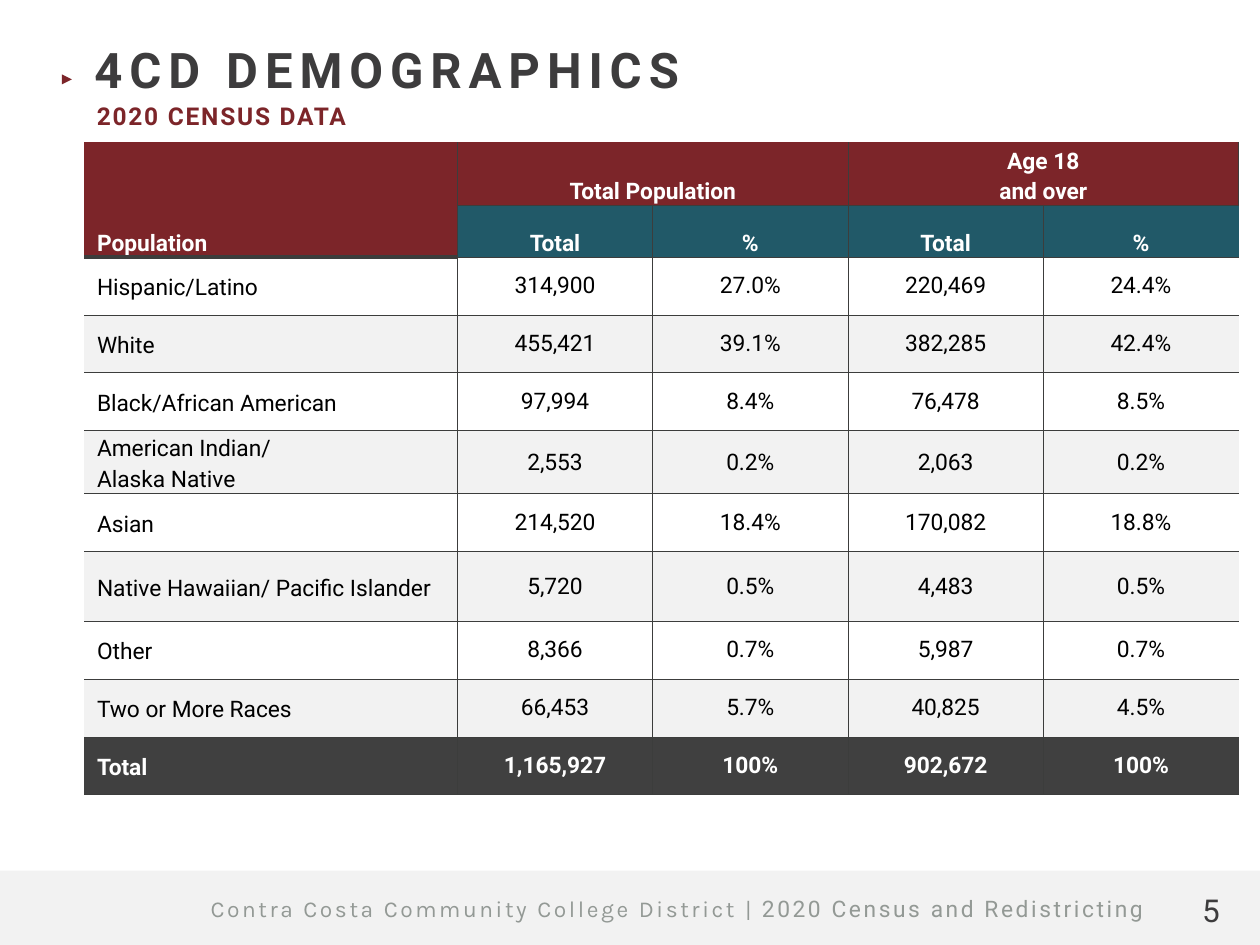
from lxml import etree
from pptx import Presentation
from pptx.dml.color import RGBColor
from pptx.enum.shapes import MSO_SHAPE
from pptx.enum.text import MSO_ANCHOR, PP_ALIGN
from pptx.oxml.ns import qn
from pptx.util import Inches, Pt

LEFT, CENTER, RIGHT = PP_ALIGN.LEFT, PP_ALIGN.CENTER, PP_ALIGN.RIGHT
BOTTOM, MIDDLE = MSO_ANCHOR.BOTTOM, MSO_ANCHOR.MIDDLE
TRIANGLE, RECTANGLE = MSO_SHAPE.ISOSCELES_TRIANGLE, MSO_SHAPE.RECTANGLE

MAROON, TEAL, CHARCOAL, INK = "7C2529", "215968", "404040", "3D3C3D"
PALE, WHITE, BLACK, GRAY, RULE = "F2F2F2", "FFFFFF", "000000", "939995", "3C3D3C"
NO_STYLE = "{2D5ABB26-0587-4C30-8999-92F81FD0307C}"
THIN, THICK = 0.5, 2.25

ROWS = [
    ("Population", "Total Population", "", "Age 18\nand over", ""),
    ("", "Total", "%", "Total", "%"),
    ("Hispanic/Latino", "314,900", "27.0%", "220,469", "24.4%"),
    ("White", "455,421", "39.1%", "382,285", "42.4%"),
    ("Black/African American", "97,994", "8.4%", "76,478", "8.5%"),
    ("American Indian/\nAlaska Native", "2,553", "0.2%", "2,063", "0.2%"),
    ("Asian", "214,520", "18.4%", "170,082", "18.8%"),
    ("Native Hawaiian/ Pacific Islander", "5,720", "0.5%", "4,483", "0.5%"),
    ("Other", "8,366", "0.7%", "5,987", "0.7%"),
    ("Two or More Races", "66,453", "5.7%", "40,825", "4.5%"),
    ("Total", "1,165,927", "100%", "902,672", "100%"),
]
COLUMN_WIDTHS = [2.96] + [1.55] * 4
ROW_HEIGHTS = [0.5, 0.41, 0.46, 0.46, 0.46, 0.5, 0.46, 0.55, 0.46, 0.46, 0.46]
MERGES = [((0, 0), (1, 0)), ((0, 1), (0, 2)), ((0, 3), (0, 4))]
HEADER_ROWS = 2
LAST_ROW, LAST_COLUMN = len(ROWS) - 1, len(COLUMN_WIDTHS) - 1

TEXTS = [
    ((1.33, 7.08, 7.84, 0.31), RIGHT, 0.9, [
        ("Contra Costa Community College District ",
         dict(size=13, name="Karla", color=GRAY, spacing=1.5)),
        ("| 2020 Census and Redistricting", dict(size=13, color=GRAY, spacing=1.5))]),
    ((0.65, 0.32, 6.92, 0.31), LEFT, 0.9, [
        ("4CD DEMOGRAPHICS", dict(size=28, color=INK, bold=True, spacing=4))]),
    ((0.67, 0.78, 6.92, 0.31), LEFT, 0.9, [
        ("2020 CENSUS DATA", dict(size=14, color=MAROON, bold=True, spacing=1))]),
    ((9.22, 7.02, 0.78, 0.38), CENTER, 1.0, [("5", dict(size=18, color=INK))]),
]


def rgb(color):
    return RGBColor.from_string(color)


def set_all(target, values):
    for key, value in values.items():
        setattr(target, key, value)


def add_span(para, text, size, color, name="Roboto", bold=False, spacing=0):
    span = para.add_run()
    span.text = text
    set_all(span.font, dict(size=Pt(size), name=name, bold=bold))
    span.font.color.rgb = rgb(color)
    if spacing:
        span.font._element.set("spc", str(int(spacing * 100)))


def add_shape(page, kind, place, color, rotation=0):
    shape = page.shapes.add_shape(kind, *map(Inches, place))
    shape.rotation = rotation
    shape.shadow.inherit = False
    shape.fill.solid()
    shape.fill.fore_color.rgb = rgb(color)
    shape.line.fill.background()


def add_text(page, place, align, line_spacing, spans):
    box = page.shapes.add_textbox(*map(Inches, place))
    box.text_frame.word_wrap = True
    para = box.text_frame.paragraphs[0]
    set_all(para, dict(alignment=align, line_spacing=line_spacing))
    for text, style in spans:
        add_span(para, text, **style)


def add_borders(cell, row, column):
    above = THICK if (row, column) == (HEADER_ROWS, 0) else THIN
    below = THICK if (row, column) == (0, 0) else THIN
    sides = [("L", THIN, column > 0), ("R", THIN, column < LAST_COLUMN),
             ("T", above, row > 0), ("B", below, True)]
    properties = cell._tc.get_or_add_tcPr()
    for side, width, shown in sides:
        if shown:
            line = etree.SubElement(properties, qn(f"a:ln{side}"), w=str(Pt(width)))
            fill = etree.SubElement(line, qn("a:solidFill"))
            etree.SubElement(fill, qn("a:srgbClr"), val=RULE)


def cell_fill(row, column):
    if row == LAST_ROW:
        return CHARCOAL
    if row < HEADER_ROWS:
        return TEAL if row == 1 and column > 0 else MAROON
    return PALE if row % 2 else WHITE


def fill_cell(cell, row, column, text):
    header, label = row < HEADER_ROWS, column == 0
    strong = header or row == LAST_ROW
    if not cell.is_spanned:
        add_borders(cell, row, column)
    cell.fill.solid()
    cell.fill.fore_color.rgb = rgb(cell_fill(row, column))
    side = 0.05 if header or label else 0
    set_all(cell, dict(margin_left=Inches(0.1 if label else side), margin_right=Inches(side),
                       margin_top=0, margin_bottom=0,
                       vertical_anchor=BOTTOM if header else MIDDLE))
    if not text:
        return
    for index, line in enumerate(text.split("\n")):
        frame = cell.text_frame
        para = frame.add_paragraph() if index else frame.paragraphs[0]
        set_all(para, dict(alignment=LEFT if label else CENTER,
                           line_spacing=1.15 if header or label else 1.0))
        add_span(para, line, 13, WHITE if strong else BLACK, bold=strong)


def add_population_table(page):
    place = (0.67, 1.13, sum(COLUMN_WIDTHS), sum(ROW_HEIGHTS))
    table = page.shapes.add_table(len(ROWS), len(COLUMN_WIDTHS), *map(Inches, place)).table
    set_all(table, dict(first_row=False, horz_banding=False))
    table._tbl.tblPr.find(qn("a:tableStyleId")).text = NO_STYLE
    for column, width in zip(table.columns, COLUMN_WIDTHS):
        column.width = Inches(width)
    for row, height in zip(table.rows, ROW_HEIGHTS):
        row.height = Inches(height)
    for first, last in MERGES:
        table.cell(*first).merge(table.cell(*last))
    for row, values in enumerate(ROWS):
        for column, text in enumerate(values):
            fill_cell(table.cell(row, column), row, column, text)


def main():
    deck = Presentation()
    set_all(deck, dict(slide_width=Inches(10), slide_height=Inches(7.5)))
    page = deck.slides.add_slide(deck.slide_layouts[6])
    add_shape(page, TRIANGLE, (0.49, 0.59, 0.08, 0.08), MAROON, 90)
    add_shape(page, RECTANGLE, (0, 6.91, 10, 0.59), PALE)
    for text in TEXTS:
        add_text(page, *text)
    add_population_table(page)
    deck.save("out.pptx")


if __name__ == "__main__":
    main()
